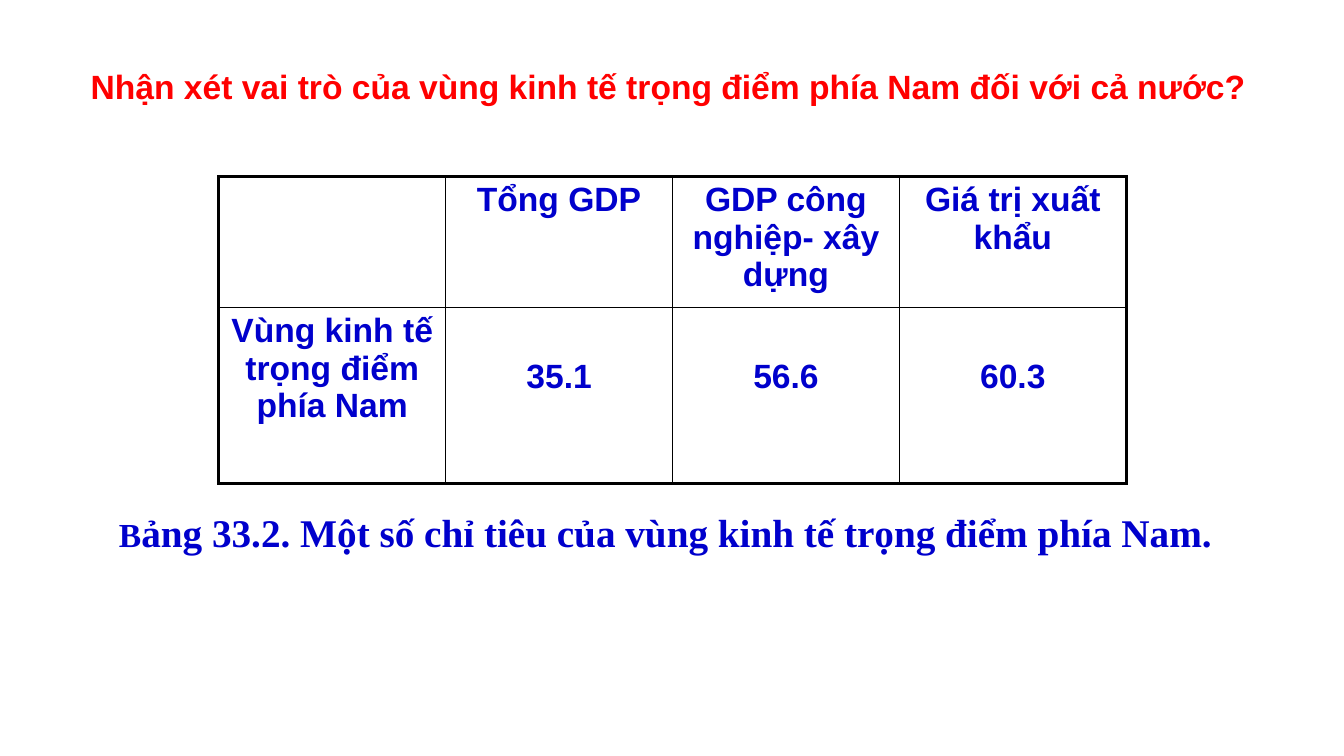
import pptx
import pptx.dml.color
import pptx.enum.text
import pptx.oxml
import pptx.oxml.ns
import pptx.util

Inches, Pt = pptx.util.Inches, pptx.util.Pt
RGBColor = pptx.dml.color.RGBColor
PP_ALIGN = pptx.enum.text.PP_ALIGN
MSO_ANCHOR = pptx.enum.text.MSO_ANCHOR

RED = RGBColor(0xFF, 0x00, 0x00)
BLUE = RGBColor(0x00, 0x00, 0xCC)
BLACK = RGBColor(0x00, 0x00, 0x00)

QUESTION = "Nhận xét vai trò của vùng kinh tế trọng điểm phía Nam đối với cả nước?"
CAPTION = [
    ("B", 24),
    ("ảng 33.2. Một số chỉ tiêu của vùng kinh tế trọng điểm phía Nam.", 28),
]
ROWS = [
    ["", "Tổng GDP", "GDP công nghiệp- xây dựng", "Giá trị xuất khẩu"],
    ["Vùng kinh tế trọng điểm phía Nam", "35.1", "56.6", "60.3"],
]
COL_WIDTH = 2.25
ROW_HEIGHTS = [1.3, 1.75]
OUTER, INNER = 2.25, 1
VALUE_DROP = 0.5


def style(p, name, size, color):
    p.font.name = name
    p.font.size = Pt(size)
    p.font.bold = True
    p.font.color.rgb = color


def set_borders(cell, widths):
    """Draw the four cell edges; widths are points for left, right, top, bottom."""
    tcPr = cell._tc.get_or_add_tcPr()
    for i, (edge, width) in enumerate(zip("LRTB", widths)):
        tcPr.insert(i, pptx.oxml.parse_xml(
            f'<a:ln{edge} {pptx.oxml.ns.nsdecls("a")} w="{Pt(width)}">'
            f'<a:solidFill><a:srgbClr val="{BLACK}"/></a:solidFill></a:ln{edge}>'))


def add_indicator_table(slide):
    n_rows, n_cols = len(ROWS), len(ROWS[0])
    table = slide.shapes.add_table(
        n_rows, n_cols, Inches(2.17), Inches(1.75),
        Inches(COL_WIDTH * n_cols), Inches(sum(ROW_HEIGHTS))).table
    table.first_row = table.horz_banding = False
    for col in table.columns:
        col.width = Inches(COL_WIDTH)
    for r, values in enumerate(ROWS):
        table.rows[r].height = Inches(ROW_HEIGHTS[r])
        for c, value in enumerate(values):
            cell = table.cell(r, c)
            cell.fill.background()
            cell.text = value
            if r and c:
                cell.margin_top = Inches(VALUE_DROP)
            p = cell.text_frame.paragraphs[0]
            p.alignment = PP_ALIGN.CENTER
            style(p, "Arial", 24, BLUE)
            at_edge = (c == 0, c == n_cols - 1, r == 0, r == n_rows - 1)
            set_borders(cell, [OUTER if e else INNER for e in at_edge])


def main():
    prs = pptx.Presentation()
    prs.slide_width, prs.slide_height = Inches(13.33), Inches(7.5)
    slide = prs.slides.add_slide(prs.slide_layouts[5])

    title = slide.shapes.title
    title.left, title.top = Inches(1.08), Inches(4.68)
    title.width, title.height = Inches(11.59), Inches(1.25)
    title.text_frame.vertical_anchor = MSO_ANCHOR.MIDDLE
    p = title.text_frame.paragraphs[0]
    p.alignment = PP_ALIGN.LEFT
    p.line_spacing = 0.9
    style(p, "Times New Roman", 28, BLUE)
    for text, size in CAPTION:
        run = p.add_run()
        run.text = text
        run.font.size = Pt(size)

    add_indicator_table(slide)

    question = slide.shapes.add_textbox(
        Inches(0.8), Inches(0.6), Inches(12.11), Inches(0.5))
    question.text_frame.word_wrap = True
    p = question.text_frame.paragraphs[0]
    p.text = QUESTION
    style(p, "Arial", 24, RED)

    prs.save("out.pptx")


if __name__ == "__main__":
    main()
